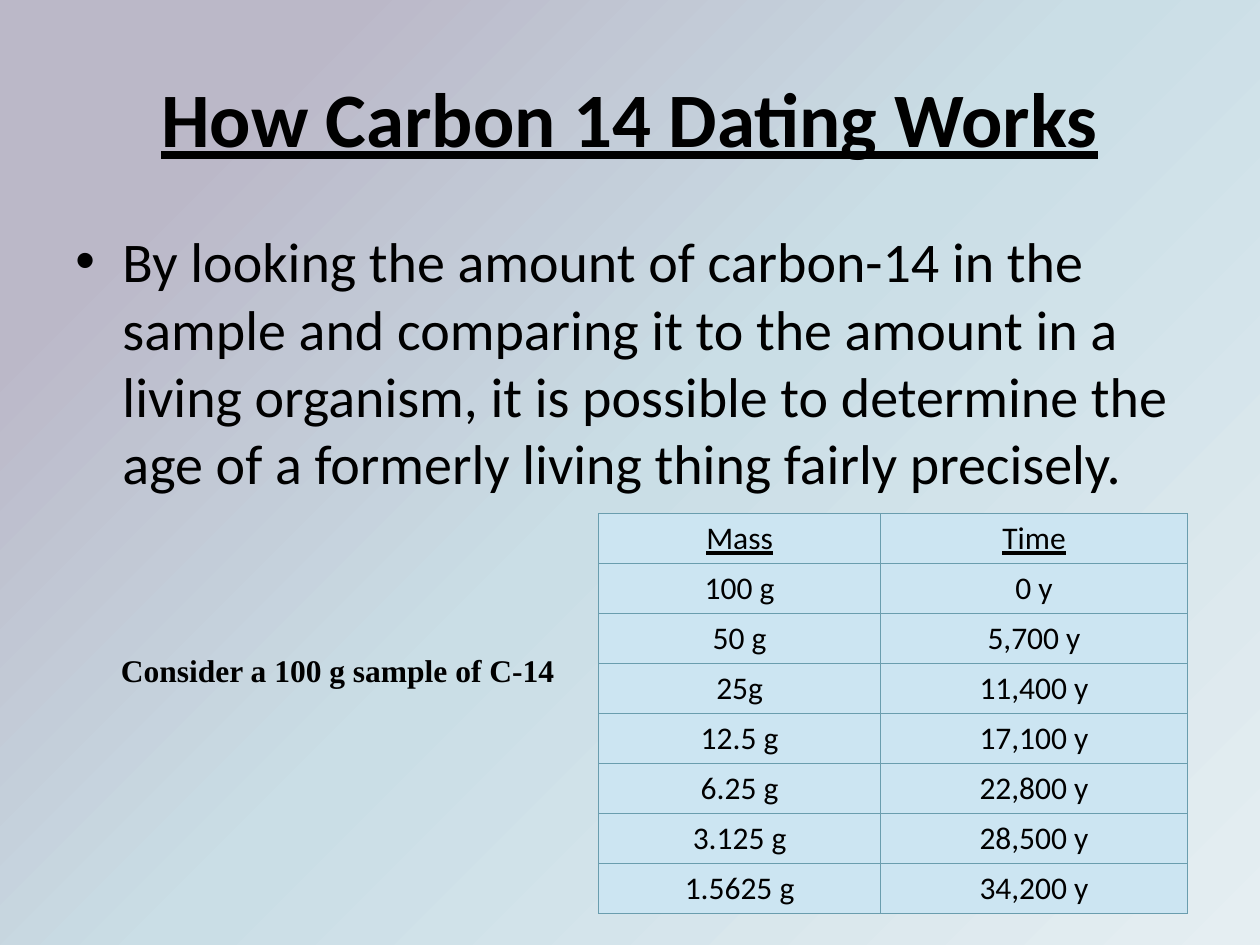
from lxml.etree import SubElement
from pptx import Presentation
from pptx.dml.color import RGBColor
from pptx.enum.text import MSO_ANCHOR, PP_ALIGN
from pptx.oxml.ns import qn
from pptx.util import Cm, Pt

COLORS = {"text": "000000", "cell": "CCE5F2", "edge": "6A9DAE",
          "mauve": "BBB8C8", "mist": "CADEE6", "pale": "E5EEF2"}
ROWS = [("Mass", "Time"), ("100 g", "0 y"), ("50 g", "5,700 y"),
        ("25g", "11,400 y"), ("12.5 g", "17,100 y"), ("6.25 g", "22,800 y"),
        ("3.125 g", "28,500 y"), ("1.5625 g", "34,200 y")]


def write(frame, text, size=18, font="Calibri", bold=False, line=False,
          align=PP_ALIGN.CENTER, anchor=MSO_ANCHOR.MIDDLE):
    """Fill a text frame and return its paragraph."""
    frame.word_wrap = True
    frame.vertical_anchor = anchor
    para = frame.paragraphs[0]
    para.alignment = align
    run = para.add_run()
    run.text = text
    run.font.name, run.font.size = font, Pt(size)
    run.font.bold, run.font.underline = bold, line
    run.font.color.rgb = RGBColor.from_string(COLORS["text"])
    return para


def edge(cell):
    """Draw thin lines on all four sides of a table cell."""
    props = cell._tc.get_or_add_tcPr()
    for i, side in enumerate(("a:lnL", "a:lnR", "a:lnT", "a:lnB")):
        line = props.makeelement(qn(side), {"w": str(Pt(0.75))})
        fill = SubElement(line, qn("a:solidFill"))
        SubElement(fill, qn("a:srgbClr"), val=COLORS["edge"])
        props.insert(i, line)


deck = Presentation()
deck.slide_width, deck.slide_height = Cm(25.4), Cm(19.05)
slide = deck.slides.add_slide(deck.slide_layouts[6])

# Background
back = slide.background.fill
back.gradient()
back.gradient_angle = 315  # counter-clockwise: top left to bottom right
stops = slide._element.find(".//" + qn("a:gsLst"))
for stop in list(stops):
    stops.remove(stop)
for spot, name in ((16, "mauve"), (50, "mist"), (100, "pale")):
    stop = SubElement(stops, qn("a:gs"), pos=str(spot * 1000))
    SubElement(stop, qn("a:srgbClr"), val=COLORS[name])

# Title and body
title = slide.shapes.add_textbox(Cm(1.27), Cm(0.76), Cm(22.86), Cm(3.18))
write(title.text_frame, "How Carbon 14 Dating Works", size=44, bold=True, line=True)

body = slide.shapes.add_textbox(Cm(1.27), Cm(4.45), Cm(22.86), Cm(12.57))
para = write(body.text_frame,
             "By looking the amount of carbon-14 in the sample and comparing it "
             "to the amount in a living organism, it is possible to determine "
             "the age of a formerly living thing fairly precisely.",
             size=32, align=PP_ALIGN.LEFT, anchor=MSO_ANCHOR.TOP)
para.space_before = Pt(6.4)
props = para._p.get_or_add_pPr()
props.set("marL", str(Cm(0.95)))
props.set("indent", str(Cm(-0.95)))
SubElement(props, qn("a:buFont"), typeface="Arial")
SubElement(props, qn("a:buChar"), char="•")

# Decay table
table = slide.shapes.add_table(len(ROWS), 2, Cm(12.07), Cm(10.36),
                               Cm(11.87), Cm(8.05)).table
table.first_row = table.horz_banding = False
for col, width in zip(table.columns, (5.68, 6.19)):
    col.width = Cm(width)
for r, row in enumerate(ROWS):
    for c, text in enumerate(row):
        cell = table.cell(r, c)
        cell.margin_left = cell.margin_right = Cm(0.18)
        cell.margin_top = cell.margin_bottom = 0
        cell.vertical_anchor = MSO_ANCHOR.MIDDLE
        cell.fill.solid()
        cell.fill.fore_color.rgb = RGBColor.from_string(COLORS["cell"])
        edge(cell)
        write(cell.text_frame, text, line=r == 0)

# Sample note
note = slide.shapes.add_textbox(Cm(1.7), Cm(13.13), Cm(9.96), Cm(1.55))
frame = note.text_frame
frame.margin_left = Cm(0.74)
frame.margin_right = frame.margin_top = frame.margin_bottom = 0
write(frame, "Consider a 100 g sample of C-14", font="Times New Roman",
      bold=True, align=PP_ALIGN.LEFT, anchor=MSO_ANCHOR.TOP)

deck.save("out.pptx")
